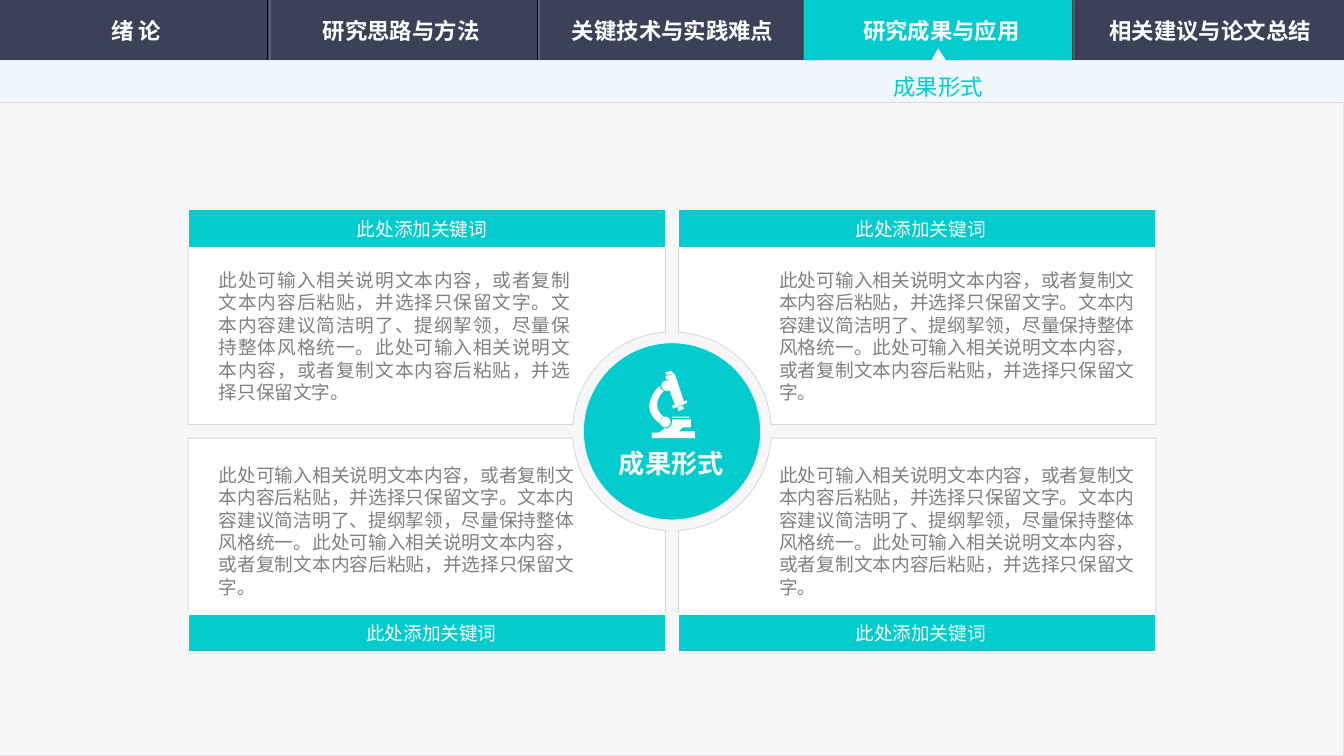
from dataclasses import dataclass
from math import asin, cos, pi, sin

from lxml.etree import SubElement
from pptx import Presentation
from pptx.dml.color import RGBColor
from pptx.enum.shapes import MSO_CONNECTOR as CONN, MSO_SHAPE as SHAPE
from pptx.enum.text import MSO_ANCHOR as ANCHOR, MSO_AUTO_SIZE as FIT, PP_ALIGN as ALIGN
from pptx.oxml.ns import qn
from pptx.util import Pt

PX = 9144  # EMU per px, 100 px to the inch
W = 1000
NAV_H, PAGE_H, BAND_Y = 45, 517, 76
CX, CY = 500, 321  # centre of the four cards
GAP, NOTCH = 5, 74  # half gap between cards, radius of the cut corner
CARD_W, CARD_H, HEAD_H = 355, 160, 28
NOTO = "Noto Sans CJK SC"
C = {
    "accent": "03CCCE", "navy": "3C4157", "dusk": "3B445B", "page": "F7F7F9",
    "edge": "D4E7F9", "band": "EFF6FC", "rule": "D9D9D9", "ridge": "596181",
    "white": "FFFFFF", "black": "000000", "body": "808080",
}
BODY = ("此处可输入相关说明文本内容，或者复制文本内容后粘贴，并选择只保留文字。"
        "文本内容建议简洁明了、提纲挈领，尽量保持整体风格统一。"
        "此处可输入相关说明文本内容，或者复制文本内容后粘贴，并选择只保留文字。")


@dataclass
class Box:
    x: int
    y: int
    w: int
    h: int


@dataclass
class Style:
    size: int
    color: str
    font: str = NOTO
    bold: bool = False
    align: ALIGN = ALIGN.CENTER


@dataclass
class Tab:
    x: int
    text: str


@dataclass
class Card:
    sx: int  # side of the centre: -1 left, 1 right
    sy: int  # -1 above, 1 below
    label_x: int
    body: Box


TABS = [Tab(2, "绪 论"), Tab(199, "研究思路与方法"), Tab(401, "关键技术与实践难点"),
        Tab(601, "研究成果与应用"), Tab(801, "相关建议与论文总结")]
CARDS = [
    Card(-1, 1, 272, Box(153, 340, 284, 111)),
    Card(1, 1, 636, Box(570, 340, 284, 111)),
    Card(-1, -1, 265, Box(153, 195, 281, 111)),
    Card(1, -1, 636, Box(570, 195, 284, 111)),
]
# Microscope outlines: a pair is a corner, six numbers are a cubic curve
ICON = [
    [(511, 300), (501, 304), (500, 302), (511, 298)],
    [(504, 303), (505, 306), (509, 304), (508, 302)],
    [(495, 277), (496, 279), (501, 278), (500, 276)],
    [(502, 278), (495, 280), (496, 282), (498, 283, 500, 285, 500, 287),
     (500, 288, 499, 289, 498, 290), (502, 301), (509, 299)],
    [(491, 315), (491, 315, 491, 314, 491, 314), (491, 312, 492, 310, 494, 310),
     (491, 308, 489, 305, 489, 301), (489, 300, 490, 294, 494, 291),
     (492, 290, 491, 289, 491, 287), (487, 290, 484, 296, 483, 301),
     (483, 307, 486, 312, 491, 315)],
    [(505, 321), (505, 321, 506, 320, 508, 318), (514, 318), (514, 312), (500, 312),
     (500, 314), (500, 316, 498, 319, 495, 319), (495, 318),
     (493, 320, 491, 322, 489, 322), (485, 322), (485, 326), (517, 326), (517, 321)],
]


def rgb(name: str) -> RGBColor:
    return RGBColor.from_string(C[name])


def paint(sp, fill: str = "", line: str = "", width: float = 0.5) -> None:
    sp.shadow.inherit = False
    if fill:
        sp.fill.solid()
        sp.fill.fore_color.rgb = rgb(fill)
    else:
        sp.fill.background()
    if line:
        sp.line.color.rgb = rgb(line)
        sp.line.width = Pt(width)
    else:
        sp.line.fill.background()


def emu(b: Box) -> list[int]:
    return [v * PX for v in (b.x, b.y, b.w, b.h)]


def add_shape(s, kind: SHAPE, b: Box, fill: str = "", line: str = ""):
    sp = s.shapes.add_shape(kind, *emu(b))
    paint(sp, fill, line)
    return sp


def add_line(s, x1: int, y1: int, x2: int, y2: int, color: str, width: float) -> None:
    ln = s.shapes.add_connector(CONN.STRAIGHT, x1 * PX, y1 * PX, x2 * PX, y2 * PX)
    ln.line.color.rgb = rgb(color)
    ln.line.width = Pt(width)
    SubElement(ln._element.spPr, qn("a:effectLst"))


def add_outline(s, points: list, fill: str, line: str = "") -> None:
    pts = [(round(x * PX), round(y * PX)) for x, y in points]
    fb = s.shapes.build_freeform(*pts[0])
    fb.add_line_segments(pts[1:], close=True)
    paint(fb.convert_to_shape(), fill, line)


def flatten(steps: list, n: int = 8) -> list:
    """Turn corners and cubic curves into plain points."""
    pts = []
    for step in steps:
        if len(step) == 2:
            pts.append(step)
            continue
        ctrl = [pts[-1], step[:2], step[2:4], step[4:]]
        for i in range(1, n + 1):
            t = i / n
            k = ((1 - t) ** 3, 3 * t * (1 - t) ** 2, 3 * t * t * (1 - t), t ** 3)
            pts.append(tuple(sum(a * p[d] for a, p in zip(k, ctrl)) for d in (0, 1)))
    return pts


def write(sp, text: str, st: Style) -> None:
    p = sp.text_frame.paragraphs[0]
    p.text = text
    p.alignment = st.align
    f = p.runs[0].font
    f.size, f.bold, f.name = Pt(st.size), st.bold, st.font
    f.color.rgb = rgb(st.color)
    SubElement(f._element, qn("a:ea")).set("typeface", st.font)


def add_text(s, b: Box, text: str, st: Style, wrap: bool = False, inset: bool = True):
    tb = s.shapes.add_textbox(*emu(b))
    tf = tb.text_frame
    tf.word_wrap = wrap
    tf.auto_size = FIT.SHAPE_TO_FIT_TEXT
    if not inset:
        tf.margin_left = tf.margin_right = tf.margin_top = tf.margin_bottom = 0
    write(tb, text, st)
    return tf


def add_glow(sp) -> None:
    fx = sp._element.spPr.find(qn("a:effectLst"))
    sh = SubElement(fx, qn("a:outerShdw"), blurRad=str(Pt(3)), dist="0", dir="16200000")
    clr = SubElement(sh, qn("a:srgbClr"), val=C["black"])
    SubElement(clr, qn("a:alpha"), val="20000")


def add_card(s, c: Card) -> None:
    a = asin(GAP / NOTCH)
    angles = [pi / 2 - a - (pi / 2 - 2 * a) * i / 24 for i in range(25)]
    far_x, far_y = GAP + CARD_W, GAP + CARD_H
    pts = [(NOTCH * cos(t), NOTCH * sin(t)) for t in angles]
    pts += [(far_x, GAP), (far_x, far_y), (GAP, far_y)]
    add_outline(s, [(CX + c.sx * x, CY + c.sy * y) for x, y in pts], "white", "rule")
    left = CX + GAP if c.sx > 0 else CX - far_x
    top = CY + far_y - HEAD_H - 1 if c.sy > 0 else CY - far_y
    add_shape(s, SHAPE.RECTANGLE, Box(left, top, CARD_W, HEAD_H), "accent", "white")
    add_text(s, Box(c.label_x, top + 6, 98, 17), "此处添加关键词", Style(10, "white"), inset=False)
    add_text(s, c.body, BODY, Style(10, "body", "Arial", align=ALIGN.JUSTIFY), wrap=True)


def main() -> None:
    prs = Presentation()
    prs.slide_width, prs.slide_height = W * PX, W * PX * 9 // 16
    s = prs.slides.add_slide(prs.slide_layouts[6])
    bg = s.background.fill
    bg.gradient()
    bg.gradient_angle = 315
    for stop, name in zip(bg.gradient_stops, ("accent", "dusk")):
        stop.color.rgb = rgb(name)

    # Navigation bar and page
    add_shape(s, SHAPE.RECTANGLE, Box(0, 0, W, NAV_H), "navy")
    add_shape(s, SHAPE.RECTANGLE, Box(0, NAV_H, W, PAGE_H), "page", "edge")
    for dark, light in ((199, 201), (400, 401), (599, 600), (798, 799)):
        add_line(s, dark, 0, dark, NAV_H, "black", 0.5)
        add_line(s, light, 0, light, NAV_H, "ridge", 0.75)
    add_glow(add_shape(s, SHAPE.RECTANGLE, Box(598, 0, 200, NAV_H), "accent"))
    add_outline(s, [(698, 36), (704, NAV_H), (W, NAV_H), (W, BAND_Y), (0, BAND_Y),
                    (0, NAV_H), (693, NAV_H)], "band")
    add_line(s, 0, BAND_Y, W, BAND_Y, "rule", 0.5)
    for tab in TABS:
        sp = add_shape(s, SHAPE.ROUNDED_RECTANGLE, Box(tab.x, 7, 199, 31))
        sp.adjustments[0] = 0
        sp.text_frame.vertical_anchor = ANCHOR.MIDDLE
        write(sp, tab.text, Style(12, "white", bold=True))
    tf = add_text(s, Box(655, 41, 88, 37), "成果形式", Style(12, "accent", align=ALIGN.LEFT))
    tf.vertical_anchor = ANCHOR.MIDDLE
    tf.paragraphs[0].line_spacing = 1.5

    # Cards around the centre
    for card in CARDS:
        add_card(s, card)

    # Centre disc with microscope
    add_shape(s, SHAPE.OVAL, Box(434, 255, 132, 132), "accent", "white")
    add_text(s, Box(450, 328, 99, 34), "成果形式", Style(14, "white", "Calibri", True))
    for outline in ICON:
        add_outline(s, flatten(outline), "white")
    add_shape(s, SHAPE.RECTANGLE, Box(500, 310, 13, 1), "white")
    for x, y in ((492, 283), (491, 310)):
        add_shape(s, SHAPE.OVAL, Box(x, y, 8, 8), "white")

    prs.save("out.pptx")


if __name__ == "__main__":
    main()
